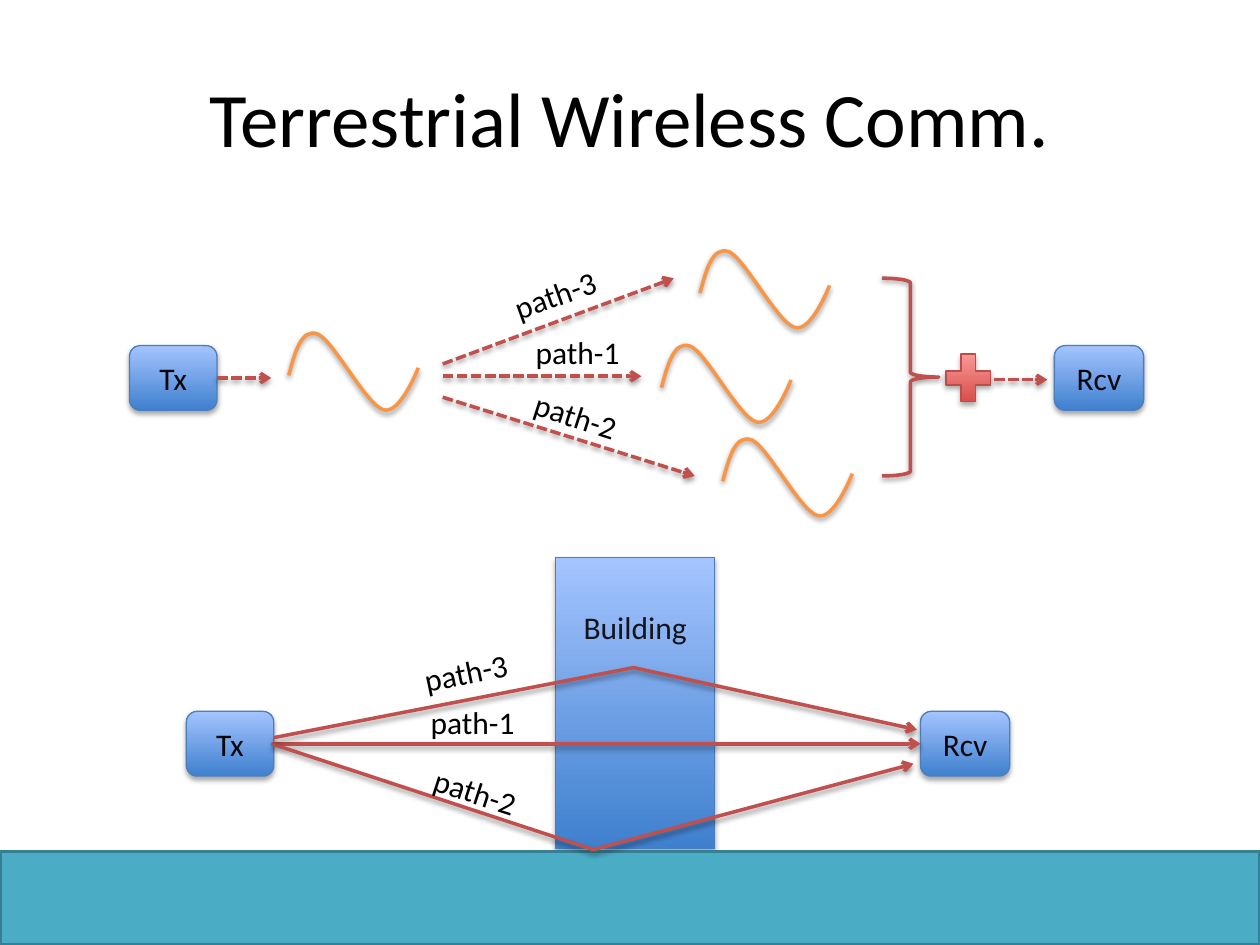
from lxml import etree
from pptx import Presentation
from pptx import util as u
from pptx.dml.color import RGBColor
from pptx.enum import dml, shapes, text
from pptx.oxml import ns

BLACK = RGBColor(0x00, 0x00, 0x00)
NODE_TEXT = RGBColor(0x03, 0x07, 0x0C)
BUILDING_TEXT = RGBColor(0x13, 0x14, 0x1C)
BLUE_DARK, BLUE_LIGHT = RGBColor(0x3F, 0x80, 0xCE), RGBColor(0xA4, 0xC4, 0xFF)
BLUE_LINE = RGBColor(0x4B, 0x7E, 0xBC)
RED_DARK, RED_LIGHT = RGBColor(0xD1, 0x40, 0x3C), RGBColor(0xFF, 0xA6, 0xA5)
RED_LINE = RGBColor(0xBF, 0x4C, 0x48)
SIGNAL = RGBColor(0xC0, 0x50, 0x4D)
WAVE = RGBColor(0xF7, 0x96, 0x46)
GROUND, GROUND_LINE = RGBColor(0x4B, 0xAC, 0xC6), RGBColor(0x37, 0x7F, 0x92)
BLUE = (BLUE_DARK, BLUE_LIGHT, BLUE_LINE)
RED = (RED_DARK, RED_LIGHT, RED_LINE)

# Bezier segments of one wave, relative to its start: two controls and an end
WAVE_CURVES = [
    ((3.6, -13.5), (7.2, -27), (16.5, -23.6)),
    ((25.5, -20), (44, 16.5), (54, 19.6)),
    ((63.5, 23), (74, -4.3), (74, -4.3)),
]


class Diagram:
    """Style and current slide, with one method for each kind of element."""

    font = "Calibri"
    label_size = 18
    line_width = 2
    edge_width = 0.75

    def __init__(self, slide):
        self.slide = slide

    def add_text(self, frame, content, size, color, align):
        paragraph = frame.paragraphs[0]
        paragraph.alignment = align
        run = paragraph.add_run()
        run.text = content
        run.font.name, run.font.size = self.font, u.Pt(size)
        run.font.color.rgb = color

    def title(self, content, left, top, width, height):
        shape = self.slide.shapes.title
        shape.left, shape.top = u.Pt(left), u.Pt(top)
        shape.width, shape.height = u.Pt(width), u.Pt(height)
        shape.text_frame.vertical_anchor = text.MSO_ANCHOR.MIDDLE
        self.add_text(shape.text_frame, content, 44, BLACK, text.PP_ALIGN.CENTER)

    def shadow(self, shape, distance, alpha):
        properties = shape._element.spPr
        effects = etree.SubElement(properties, ns.qn("a:effectLst"))
        outer = etree.SubElement(
            effects, ns.qn("a:outerShdw"), blurRad=str(u.Pt(3.1)),
            dist=str(u.Pt(distance)), dir="5400000", rotWithShape="0")
        color = etree.SubElement(outer, ns.qn("a:srgbClr"), val="000000")
        etree.SubElement(color, ns.qn("a:alpha"), val=str(alpha * 1000))

    def stroke(self, shape, color, arrow=False, dashed=False):
        shape.line.color.rgb = color
        shape.line.width = u.Pt(self.line_width)
        if dashed:
            shape.line.dash_style = dml.MSO_LINE.SQUARE_DOT
        if arrow:
            etree.SubElement(shape.line._get_or_add_ln(),
                             ns.qn("a:tailEnd"), type="arrow")
        self.shadow(shape, 1.6, 38)

    def preset(self, kind, left, top, width, height):
        return self.slide.shapes.add_shape(
            kind, u.Pt(left), u.Pt(top), u.Pt(width), u.Pt(height))

    def block(self, kind, left, top, width, height, palette):
        shape = self.preset(kind, left, top, width, height)
        dark, light, edge = palette
        shape.fill.gradient()
        shape.fill.gradient_angle = 90
        for stop, position, color in zip(shape.fill.gradient_stops, (0, 1), (dark, light)):
            stop.position, stop.color.rgb = position, color
        shape.line.color.rgb = edge
        shape.line.width = u.Pt(self.edge_width)
        self.shadow(shape, 1.8, 35)
        return shape

    def node(self, content, left, top, width):
        shape = self.block(shapes.MSO_SHAPE.ROUNDED_RECTANGLE, left, top, width, 37, BLUE)
        shape.text_frame.vertical_anchor = text.MSO_ANCHOR.MIDDLE
        self.add_text(shape.text_frame, content, self.label_size, NODE_TEXT,
                      text.PP_ALIGN.CENTER)
        return shape

    def building(self, content, left, top, width, height):
        shape = self.block(shapes.MSO_SHAPE.RECTANGLE, left, top, width, height, BLUE)
        shape.text_frame.vertical_anchor = text.MSO_ANCHOR.TOP
        shape.text_frame.margin_top = u.Pt(29)
        self.add_text(shape.text_frame, content, self.label_size, BUILDING_TEXT,
                      text.PP_ALIGN.CENTER)

    def ground(self, left, top, width, height):
        shape = self.preset(shapes.MSO_SHAPE.RECTANGLE, left, top, width, height)
        shape.shadow.inherit = False
        shape.fill.solid()
        shape.fill.fore_color.rgb = GROUND
        shape.line.color.rgb = GROUND_LINE
        shape.line.width = u.Pt(self.line_width)

    def brace(self, left, top, width, height):
        shape = self.preset(shapes.MSO_SHAPE.RIGHT_BRACE, left, top, width, height)
        shape.fill.background()
        self.stroke(shape, SIGNAL)

    def arrow(self, start, end, dashed=True, source=None, target=None):
        line = self.slide.shapes.add_connector(
            shapes.MSO_CONNECTOR.STRAIGHT, *(u.Pt(value) for value in start + end))
        if source is not None:
            line.begin_connect(source, 3)
        if target is not None:
            line.end_connect(target, 1)
        self.stroke(line, SIGNAL, arrow=True, dashed=dashed)

    def outline(self, points):
        points = [(u.Pt(x), u.Pt(y)) for x, y in points]
        builder = self.slide.shapes.build_freeform(*points[0])
        builder.add_line_segments(points[1:], close=False)
        shape = builder.convert_to_shape()
        shape.fill.background()
        return shape

    def bent_arrow(self, *points):
        self.stroke(self.outline(points), SIGNAL, arrow=True)

    def wave(self, x, y):
        curves = [[(x + dx, y + dy) for dx, dy in curve] for curve in WAVE_CURVES]
        shape = self.outline([(x, y)] + [curve[-1] for curve in curves])
        # Turn each straight segment into its curve
        segments = list(shape._element.iter(ns.qn("a:lnTo")))
        for segment, curve in zip(segments, curves):
            bezier = etree.Element(ns.qn("a:cubicBezTo"))
            for px, py in curve:
                etree.SubElement(bezier, ns.qn("a:pt"), x=str(u.Pt(px) - shape.left),
                                 y=str(u.Pt(py) - shape.top))
            segment.getparent().replace(segment, bezier)
        self.stroke(shape, WAVE)

    def label(self, content, left, top, rotation=0):
        box = self.slide.shapes.add_textbox(u.Pt(left), u.Pt(top), u.Pt(63.5), u.Pt(29))
        box.rotation = rotation
        box.text_frame.word_wrap = False
        box.text_frame.auto_size = text.MSO_AUTO_SIZE.SHAPE_TO_FIT_TEXT
        self.add_text(box.text_frame, content, self.label_size, BLACK, text.PP_ALIGN.LEFT)


def main():
    presentation = Presentation()
    presentation.slide_width, presentation.slide_height = u.Pt(720), u.Pt(540)
    slide = presentation.slides.add_slide(presentation.slide_layouts[5])
    diagram = Diagram(slide)

    # Scene: building, ground and the two stations
    diagram.building("Building", 317.5, 318.5, 91, 166.5)
    diagram.title("Terrestrial Wireless Comm.", 36, 21.6, 648, 90)
    sender = diagram.node("Tx", 106.5, 406.5, 50)
    receiver = diagram.node("Rcv", 526, 406.5, 51)
    diagram.arrow((156.5, 425), (526, 425), dashed=False, source=sender, target=receiver)
    diagram.ground(0, 486.5, 720, 53.5)
    diagram.bent_arrow((155, 425), (339, 485.5), (522, 436.5))
    diagram.bent_arrow((156.5, 421.5), (362, 381.5), (524, 417))

    # Signal chain: sender, paths, sum and receiver
    for start in ((165, 214.5), (400, 167.5), (378, 221.5), (413, 275)):
        diagram.wave(*start)
    source = diagram.node("Tx", 74, 197.5, 50)
    diagram.arrow((124, 216), (155, 216), source=source)
    diagram.node("Rcv", 602.5, 197.5, 51)
    diagram.brace(504, 159, 32.5, 113)
    diagram.block(shapes.MSO_SHAPE.MATH_PLUS, 536, 197.5, 34.5, 37, RED)
    for start, end in (((253, 208), (385, 159)), ((253, 215), (366.5, 215)),
                       ((253, 227), (397, 272)), ((568, 217), (598.5, 217))):
        diagram.arrow(start, end)

    # Path labels
    for number, left, top, rotation in (
            (1, 239, 398, 0), (2, 240.5, 438, 17.9), (3, 235, 369.5, 348.1),
            (1, 299, 187, 0), (3, 286, 153.5, 340.5), (2, 298, 223.5, 17.9)):
        diagram.label(f"path-{number}", left, top, rotation)

    presentation.save("out.pptx")


if __name__ == "__main__":
    main()
